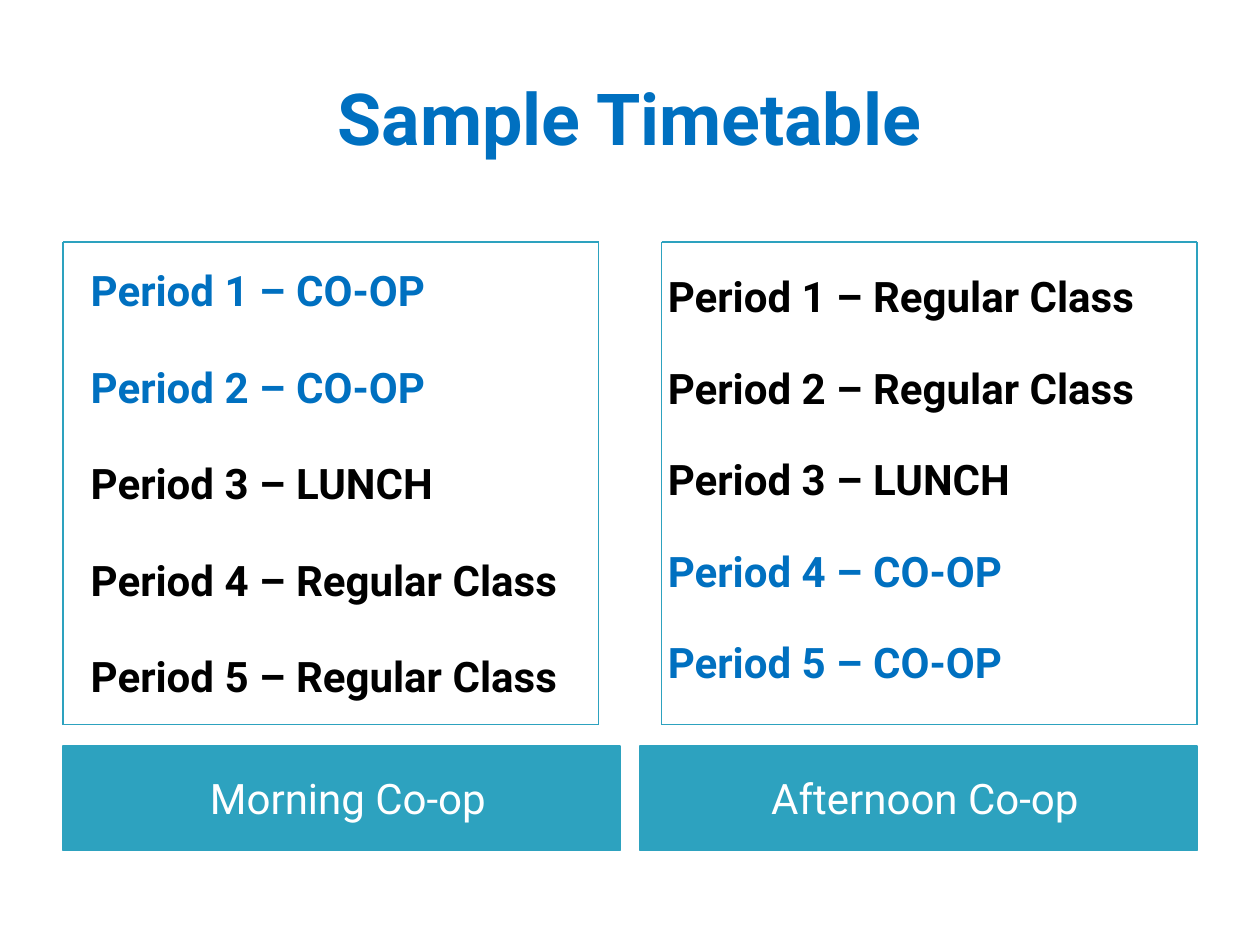
"""Build the sample co-op timetable slide."""
from lxml.etree import SubElement
from pptx import Presentation
from pptx.dml.color import RGBColor
from pptx.enum.shapes import MSO_CONNECTOR, MSO_SHAPE
from pptx.enum.text import MSO_ANCHOR, PP_ALIGN
from pptx.oxml.ns import qn
from pptx.util import Inches, Pt

BLUE = RGBColor(0x00, 0x70, 0xC0)
TEAL = RGBColor(0x2D, 0xA2, 0xBF)
BLACK = RGBColor(0x00, 0x00, 0x00)
WHITE = RGBColor(0xFF, 0xFF, 0xFF)

COOP, LUNCH, CLASS = "CO-OP", "LUNCH", "Regular Class"
TOP, BOTTOM = 1.92, 5.75
WIDTH = 4.42


def write(shape, lines, size=24, bold=False, color=BLACK, align=PP_ALIGN.LEFT,
          anchor=MSO_ANCHOR.MIDDLE, left=0.1, spacing=1.0, gap=0):
    """Fill a shape with paragraphs given as (text, color) or plain text."""
    frame = shape.text_frame
    frame.word_wrap = True
    frame.vertical_anchor = anchor
    frame.margin_left = Inches(left)
    for index, line in enumerate(lines):
        text, tint = line if isinstance(line, tuple) else (line, color)
        para = frame.paragraphs[0] if index == 0 else frame.add_paragraph()
        para.alignment = align
        para.line_spacing = spacing
        if index:
            para.space_before = Pt(gap)
        run = para.add_run()
        run.text = text
        font = run.font
        font.name, font.size, font.bold = "Roboto", Pt(size), bold
        font.color.rgb = tint


def add_box(slide, left, top, width, height):
    """Add an empty text box."""
    return slide.shapes.add_textbox(
        Inches(left), Inches(top), Inches(width), Inches(height))


def add_band(slide, left, label):
    """Add a filled label below a timetable."""
    band = slide.shapes.add_shape(
        MSO_SHAPE.RECTANGLE, Inches(left), Inches(5.92), Inches(WIDTH), Inches(0.83))
    band.shadow.inherit = False
    band.fill.solid()
    band.fill.fore_color.rgb = TEAL
    band.line.color.rgb = TEAL
    band.line.width = Pt(0.75)
    write(band, [label], color=WHITE, align=PP_ALIGN.CENTER, left=0.2)


def add_line(slide, start, end):
    """Add a thin teal line between two points."""
    line = slide.shapes.add_connector(
        MSO_CONNECTOR.STRAIGHT, *(Inches(value) for value in start + end))
    line.line.color.rgb = TEAL
    line.line.width = Pt(0.75)
    SubElement(line._element.spPr, qn("a:effectLst"))


def add_frame(slide, left, right):
    """Draw the four sides of a timetable frame."""
    for y in (TOP, BOTTOM):
        add_line(slide, (left, y), (right, y))
    for x in (left, right):
        add_line(slide, (x, TOP), (x, BOTTOM))


def add_periods(slide, left, top, names, spacing):
    """List the periods of a day, with co-op in blue."""
    lines = [(f"Period {number} – {name}", BLUE if name == COOP else BLACK)
             for number, name in enumerate(names, 1)]
    write(add_box(slide, left, top, WIDTH, 3.9), lines, bold=True,
          anchor=MSO_ANCHOR.TOP, left=0.22, spacing=spacing, gap=12)


def main():
    """Build and save the slide."""
    deck = Presentation()
    deck.slide_width, deck.slide_height = Inches(10), Inches(7.5)
    slide = deck.slides.add_slide(deck.slide_layouts[6])
    write(add_box(slide, 0.5, 0.3, 9, 1.25), ["Sample Timetable"], size=41,
          bold=True, color=BLUE, align=PP_ALIGN.CENTER)
    add_band(slide, 0.5, "Morning Co-op")
    add_band(slide, 5.08, "Afternoon Co-op")
    add_periods(slide, 0.5, 1.85, [COOP, COOP, LUNCH, CLASS, CLASS], 1.5)
    add_periods(slide, 5.08, 1.94, [CLASS, CLASS, LUNCH, COOP, COOP], 1.4)
    add_frame(slide, 0.5, 4.75)
    add_frame(slide, 5.25, 9.5)
    deck.save("out.pptx")


if __name__ == "__main__":
    main()
